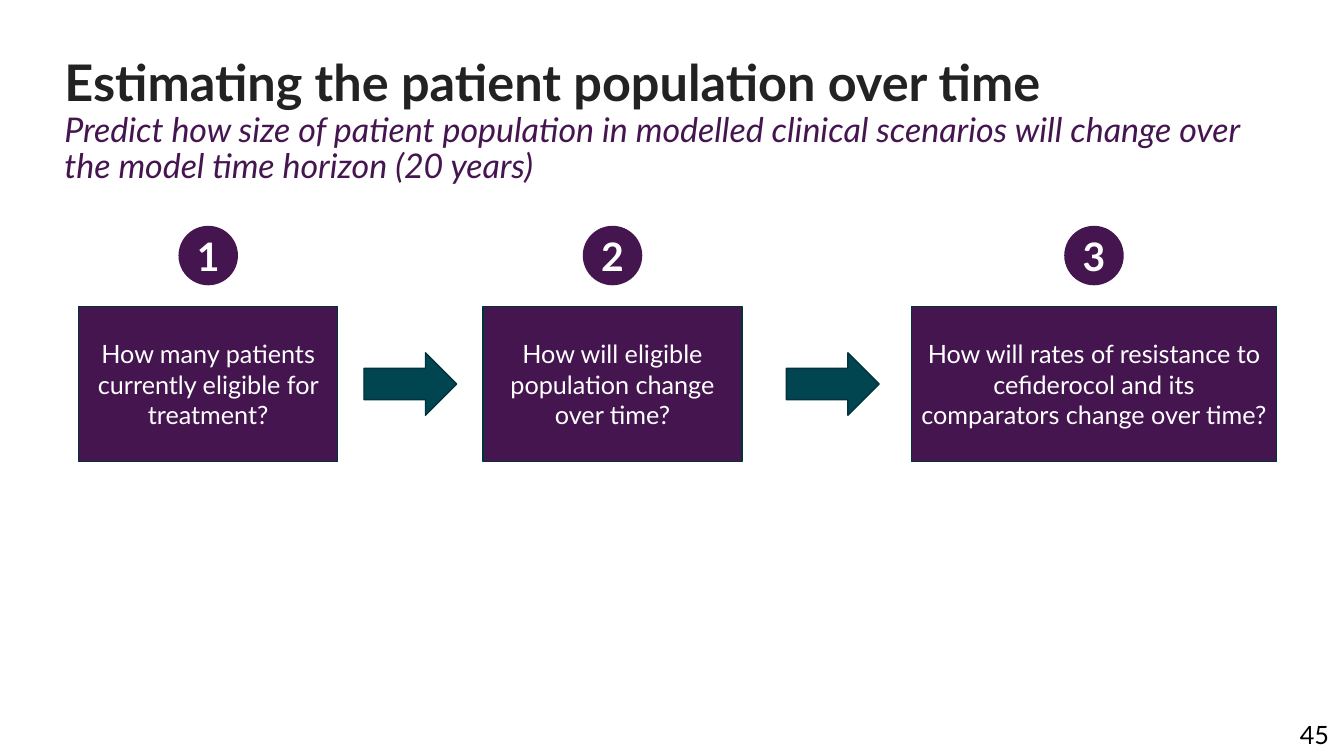
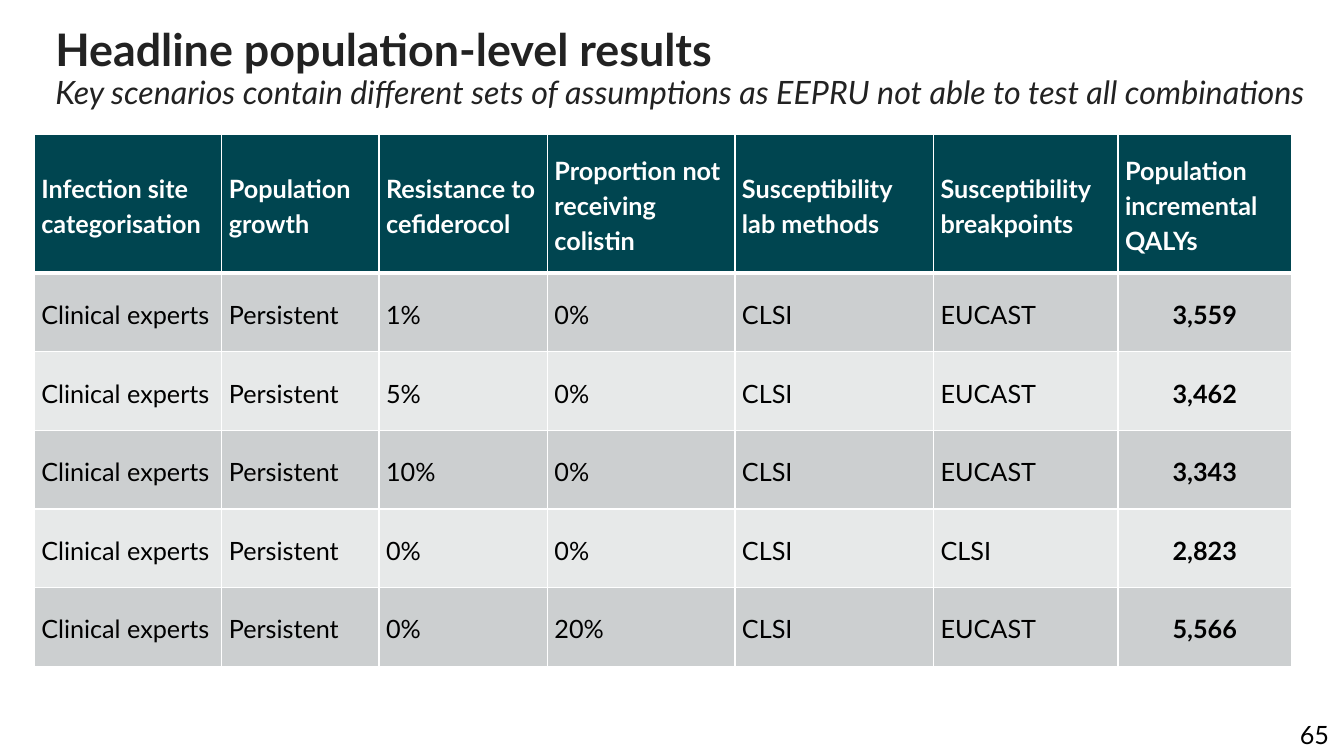
import pptx
import pptx.util
import pptx.dml.color
import pptx.enum.shapes
import pptx.enum.text
import pptx.oxml
import pptx.oxml.ns

Inches = pptx.util.Inches
Pt = pptx.util.Pt
Shape = pptx.enum.shapes.MSO_SHAPE
Align = pptx.enum.text.PP_ALIGN
Anchor = pptx.enum.text.MSO_ANCHOR

FONT = "Lato"
PURPLE, TEAL, DARK_TEAL = "451550", "004550", "00333B"
INK, BLACK, WHITE = "222222", "000000", "FFFFFF"
BANDS = ["CCCFD0", "E7E9E9"]

STEPS = [
    (0.78, 2.57, "How many patients currently eligible for treatment?"),
    (4.79, 2.57, "How will eligible population change over time?"),
    (9.04, 3.62, "How will rates of resistance to cefiderocol and its comparators change over time?"),
]
ARROW_LEFTS = [3.61, 7.8]

COLUMN_WIDTHS = [1.86, 1.56, 1.67, 1.86, 1.97, 1.83, 1.72]
HEADER_HEIGHT, ROW_HEIGHT = 1.38, 0.78
HEADER = ["Infection site categorisation", "Population growth", "Resistance to cefiderocol",
          "Proportion not receiving colistin", "Susceptibility lab methods",
          "Susceptibility breakpoints", "Population incremental QALYs"]
SCENARIOS = [
    ("1%", "0%", "EUCAST", "3,559"),
    ("5%", "0%", "EUCAST", "3,462"),
    ("10%", "0%", "EUCAST", "3,343"),
    ("0%", "0%", "CLSI", "2,823"),
    ("0%", "20%", "EUCAST", "5,566"),
]


def rgb(value):
    return pptx.dml.color.RGBColor.from_string(value)


def paint(fill, value):
    fill.solid()
    fill.fore_color.rgb = rgb(value)


def set_all(target, formats):
    for name, value in formats.items():
        setattr(target, name, value)


def write(para, text, size, color, align=Align.LEFT, spacing=1.0, **formats):
    set_all(para, {"alignment": align, "line_spacing": spacing})
    span = para.add_run()
    span.text = text
    set_all(span.font, {"name": FONT, "size": Pt(size), **formats})
    span.font.color.rgb = rgb(color)


def add_text_box(page, left, top, width, height):
    box = page.shapes.add_textbox(Inches(left), Inches(top), Inches(width), Inches(height))
    box.text_frame.word_wrap = True
    return box.text_frame


def add_block(page, kind, left, top, width, height, fill, line=None):
    block = page.shapes.add_shape(kind, Inches(left), Inches(top), Inches(width), Inches(height))
    block.shadow.inherit = False
    paint(block.fill, fill)
    if line:
        paint(block.line.fill, line)
        block.line.width = Pt(1)
    else:
        block.line.fill.background()
    set_all(block.text_frame, {"word_wrap": True, "vertical_anchor": Anchor.MIDDLE})
    return block.text_frame


def add_title(page, box, title, title_size, subtitle, subtitle_size, subtitle_color):
    frame = add_text_box(page, *box)
    write(frame.paragraphs[0], title, title_size, INK, spacing=0.9, bold=True)
    write(frame.add_paragraph(), subtitle, subtitle_size, subtitle_color, spacing=0.9, italic=True)


def add_page(deck, number):
    page = deck.slides.add_slide(deck.slide_layouts[6])
    frame = add_text_box(page, 11.44, 7.09, 1.84, 0.4)
    write(frame.paragraphs[0], str(number), 18, BLACK, Align.RIGHT)
    return page


def add_step(page, number, left, top, width, text):
    badge, box_drop, box_height = 0.59, 0.8, 1.54
    box = add_block(page, Shape.RECTANGLE, left, top + box_drop, width, box_height, PURPLE, DARK_TEAL)
    write(box.paragraphs[0], text, 18, WHITE, Align.CENTER)
    circle = add_block(page, Shape.OVAL, left + (width - badge) / 2, top, badge, badge, PURPLE)
    set_all(circle, dict.fromkeys(["margin_left", "margin_right", "margin_top", "margin_bottom"], 0))
    write(circle.paragraphs[0], str(number), 28, WHITE, Align.CENTER, bold=True)


def add_flow(page, top):
    for number, (left, width, text) in enumerate(STEPS, 1):
        add_step(page, number, left, top, width, text)
    for left in ARROW_LEFTS:
        add_block(page, Shape.RIGHT_ARROW, left, top + 1.26, 0.92, 0.62, TEAL, DARK_TEAL)


def add_borders(cell, bottom):
    properties = cell._tc.get_or_add_tcPr()
    for side, width in {"L": 1, "R": 1, "T": 1, "B": bottom}.items():
        properties.append(pptx.oxml.parse_xml(
            f'<a:ln{side} {pptx.oxml.ns.nsdecls("a")} w="{Pt(width)}"><a:solidFill>'
            f'<a:srgbClr val="{WHITE}"/></a:solidFill></a:ln{side}>'))


def fill_cell(cell, text, fill, color, bold, align, bottom):
    set_all(cell, {"margin_left": Inches(0.07), "margin_right": Inches(0.07),
                   "margin_top": 0, "margin_bottom": 0, "vertical_anchor": Anchor.MIDDLE})
    add_borders(cell, bottom)
    paint(cell.fill, fill)
    write(cell.text_frame.paragraphs[0], text, 18, color, align, 1.15, bold=bold)


def add_results_table(page, left, top):
    rows = [HEADER] + [
        ["Clinical experts", "Persistent", resistance, colistin, "CLSI", breakpoints, qalys]
        for resistance, colistin, breakpoints, qalys in SCENARIOS]
    heights = [HEADER_HEIGHT] + [ROW_HEIGHT] * len(SCENARIOS)
    table = page.shapes.add_table(len(rows), len(HEADER), Inches(left), Inches(top),
                                  Inches(sum(COLUMN_WIDTHS)), Inches(sum(heights))).table
    for column, width in zip(table.columns, COLUMN_WIDTHS):
        column.width = Inches(width)
    for index, (row, height, texts) in enumerate(zip(table.rows, heights, rows)):
        row.height = Inches(height)
        for position, (cell, text) in enumerate(zip(row.cells, texts)):
            if index == 0:
                fill_cell(cell, text, TEAL, WHITE, True, Align.LEFT, 3)
            else:
                last = position == len(HEADER) - 1
                fill_cell(cell, text, BANDS[(index - 1) % 2], BLACK, last,
                          Align.CENTER if last else Align.LEFT, 1)


def build_population_page(deck):
    page = add_page(deck, 45)
    add_title(page, (0.54, 0.53, 12.12, 1.4), "Estimating the patient population over time", 36,
              "Predict how size of patient population in modelled clinical scenarios "
              "will change over the model time horizon (20 years)", 24.3, PURPLE)
    add_flow(page, 2.24)


def build_results_page(deck):
    page = add_page(deck, 65)
    add_title(page, (0.45, 0.23, 12.74, 1.29), "Headline population-level results", 32,
              "Key scenarios contain different sets of assumptions as EEPRU not able "
              "to test all combinations", 23, INK)
    add_results_table(page, 0.34, 1.33)


def main():
    deck = pptx.Presentation()
    set_all(deck, {"slide_width": Inches(13.33), "slide_height": Inches(7.5)})
    build_population_page(deck)
    build_results_page(deck)
    deck.save("out.pptx")


if __name__ == "__main__":
    main()
